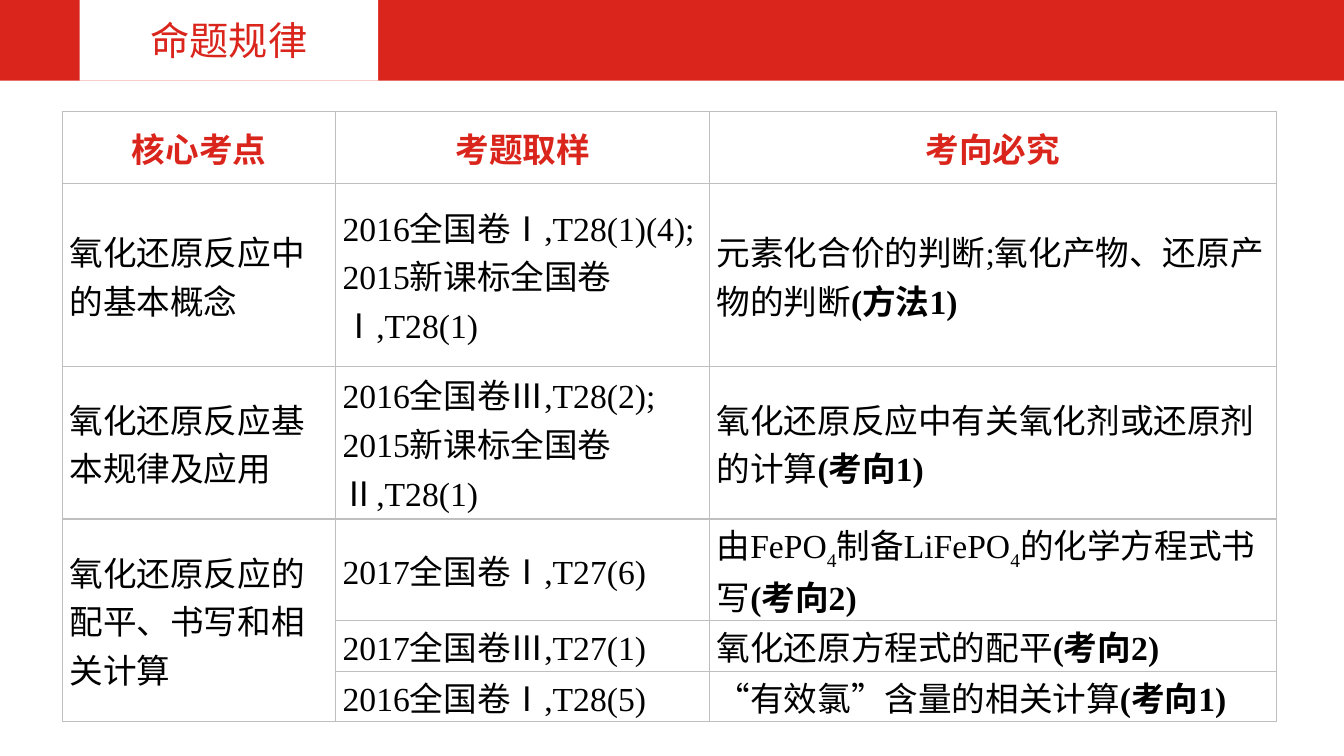
"""Build the exam pattern slide with its table of topics."""
import dataclasses
import typing

import lxml.etree
import pptx
import pptx.dml.color
import pptx.enum.shapes
import pptx.enum.text
import pptx.oxml.ns
import pptx.util

RED = pptx.dml.color.RGBColor(0xDA, 0x25, 0x1C)
WHITE = pptx.dml.color.RGBColor(0xFF, 0xFF, 0xFF)
BLACK = pptx.dml.color.RGBColor(0x00, 0x00, 0x00)
GREY = pptx.dml.color.RGBColor(0xBF, 0xBF, 0xBF)
SERIF = "Times New Roman"
SANS = "Noto Sans CJK SC"
WIDTH = pptx.util.Inches(13.33)
HEIGHT = pptx.util.Inches(7.5)
CENTER = pptx.enum.text.PP_ALIGN.CENTER
LEFT = pptx.enum.text.PP_ALIGN.LEFT
MIDDLE = pptx.enum.text.MSO_ANCHOR.MIDDLE

BAR = 10.67
COLS = (20.33, 27.83, 42.15)
ROWS = (9.47, 20.13, 20.13, 13.47, 6.67, 6.67)
HEADS = ("核心考点", "考题取样", "考向必究")


@dataclasses.dataclass(frozen=True)
class Topic:
    """One exam topic with the rows it spans."""
    row: int
    span: int
    name: str


@dataclasses.dataclass(frozen=True)
class Trend:
    """Sample questions, tested skill in plain and lowered parts, and its tag."""
    papers: tuple[str, ...]
    skill: tuple[str, ...]
    tag: str


TOPICS = (
    Topic(1, 1, "氧化还原反应中的基本概念"),
    Topic(2, 1, "氧化还原反应基本规律及应用"),
    Topic(3, 3, "氧化还原反应的配平、书写和相关计算"),
)
TRENDS = (
    Trend(("2016全国卷Ⅰ,T28(1)(4);", "2015新课标全国卷Ⅰ,T28(1)"),
          ("元素化合价的判断;氧化产物、还原产物的判断",), "(方法1)"),
    Trend(("2016全国卷Ⅲ,T28(2);", "2015新课标全国卷Ⅱ,T28(1)"),
          ("氧化还原反应中有关氧化剂或还原剂的计算",), "(考向1)"),
    Trend(("2017全国卷Ⅰ,T27(6)",),
          ("由FePO", "4", "制备LiFePO", "4", "的化学方程式书写"), "(考向2)"),
    Trend(("2017全国卷Ⅲ,T27(1)",), ("氧化还原方程式的配平",), "(考向2)"),
    Trend(("2016全国卷Ⅰ,T28(5)",), ("“有效氯”含量的相关计算",), "(考向1)"),
)


def across(share: float) -> int:
    """Turn a percentage of the slide's width into a length."""
    return round(WIDTH * share / 100)


def down(share: float) -> int:
    """Turn a percentage of the slide's height into a length."""
    return round(HEIGHT * share / 100)


def write(para: typing.Any, text: str, *, size: float = 24, font: str = SERIF,
          color: pptx.dml.color.RGBColor = BLACK, bold: bool = False,
          low: bool = False, align: typing.Any = LEFT) -> None:
    """Add a formatted run to a paragraph."""
    para.alignment = align
    run = para.add_run()
    run.text = text
    run.font.size = pptx.util.Pt(size)
    run.font.bold = bold
    run.font.color.rgb = color
    run.font.name = font
    props = run.font._element
    east = lxml.etree.SubElement(props, pptx.oxml.ns.qn("a:ea"))
    east.set("typeface", SANS)
    if low:
        props.set("baseline", "-25000")


def frame(cell: typing.Any, wide: float, high: float) -> None:
    """Give a cell its borders, insets and clear fill."""
    props = cell._tc.get_or_add_tcPr()
    for side in ("lnL", "lnR", "lnT", "lnB"):
        line = lxml.etree.SubElement(props, pptx.oxml.ns.qn(f"a:{side}"),
                                     w=str(pptx.util.Pt(1)))
        fill = lxml.etree.SubElement(line, pptx.oxml.ns.qn("a:solidFill"))
        lxml.etree.SubElement(fill, pptx.oxml.ns.qn("a:srgbClr"), val=str(GREY))
    cell.fill.background()
    cell.vertical_anchor = MIDDLE
    cell.margin_left = cell.margin_right = across(wide)
    cell.margin_top = cell.margin_bottom = down(high)


def head(slide: typing.Any) -> None:
    """Draw the red bar and the title on its white tab."""
    bar = slide.shapes.add_shape(pptx.enum.shapes.MSO_SHAPE.RECTANGLE,
                                 0, 0, WIDTH, down(BAR))
    bar.shadow.inherit = False
    bar.fill.solid()
    bar.fill.fore_color.rgb = RED
    bar.line.fill.background()
    title = slide.shapes.title
    title.left, title.top = across(5.93), 0
    title.width, title.height = across(22.2), down(BAR)
    title.fill.solid()
    title.fill.fore_color.rgb = WHITE
    title.text_frame.vertical_anchor = MIDDLE
    write(title.text_frame.paragraphs[0], "命题规律", size=28, color=RED,
          align=CENTER)
    bar.element.addnext(title.element)


def grid(slide: typing.Any) -> None:
    """Draw the table of topics, samples and trends."""
    table = slide.shapes.add_table(
        len(ROWS), len(COLS), across(4.65), down(14.8),
        across(sum(COLS)), down(sum(ROWS))).table
    table.first_row = table.horz_banding = False
    for col, share in zip(table.columns, COLS):
        col.width = across(share)
    for row, share in zip(table.rows, ROWS):
        row.height = down(share)
    for num, row in enumerate(table.rows):
        for cell in row.cells:
            frame(cell, *((0.52, 0) if num else (1.2, 1.07)))
    for col, text in enumerate(HEADS):
        write(table.cell(0, col).text_frame.paragraphs[0], text, font=SANS,
              color=RED, bold=True, align=CENTER)
    for topic in TOPICS:
        cell = table.cell(topic.row, 0)
        if topic.span > 1:
            cell.merge(table.cell(topic.row + topic.span - 1, 0))
        write(cell.text_frame.paragraphs[0], topic.name)
    for row, trend in enumerate(TRENDS, 1):
        body = table.cell(row, 1).text_frame
        for num, paper in enumerate(trend.papers):
            write(body.add_paragraph() if num else body.paragraphs[0], paper)
        para = table.cell(row, 2).text_frame.paragraphs[0]
        for num, part in enumerate(trend.skill):
            write(para, part, low=num % 2 == 1)
        write(para, trend.tag, bold=True)


def main() -> None:
    """Build and save the slide."""
    deck = pptx.Presentation()
    deck.slide_width, deck.slide_height = WIDTH, HEIGHT
    slide = deck.slides.add_slide(deck.slide_layouts[5])
    head(slide)
    grid(slide)
    deck.save("out.pptx")


if __name__ == "__main__":
    main()
